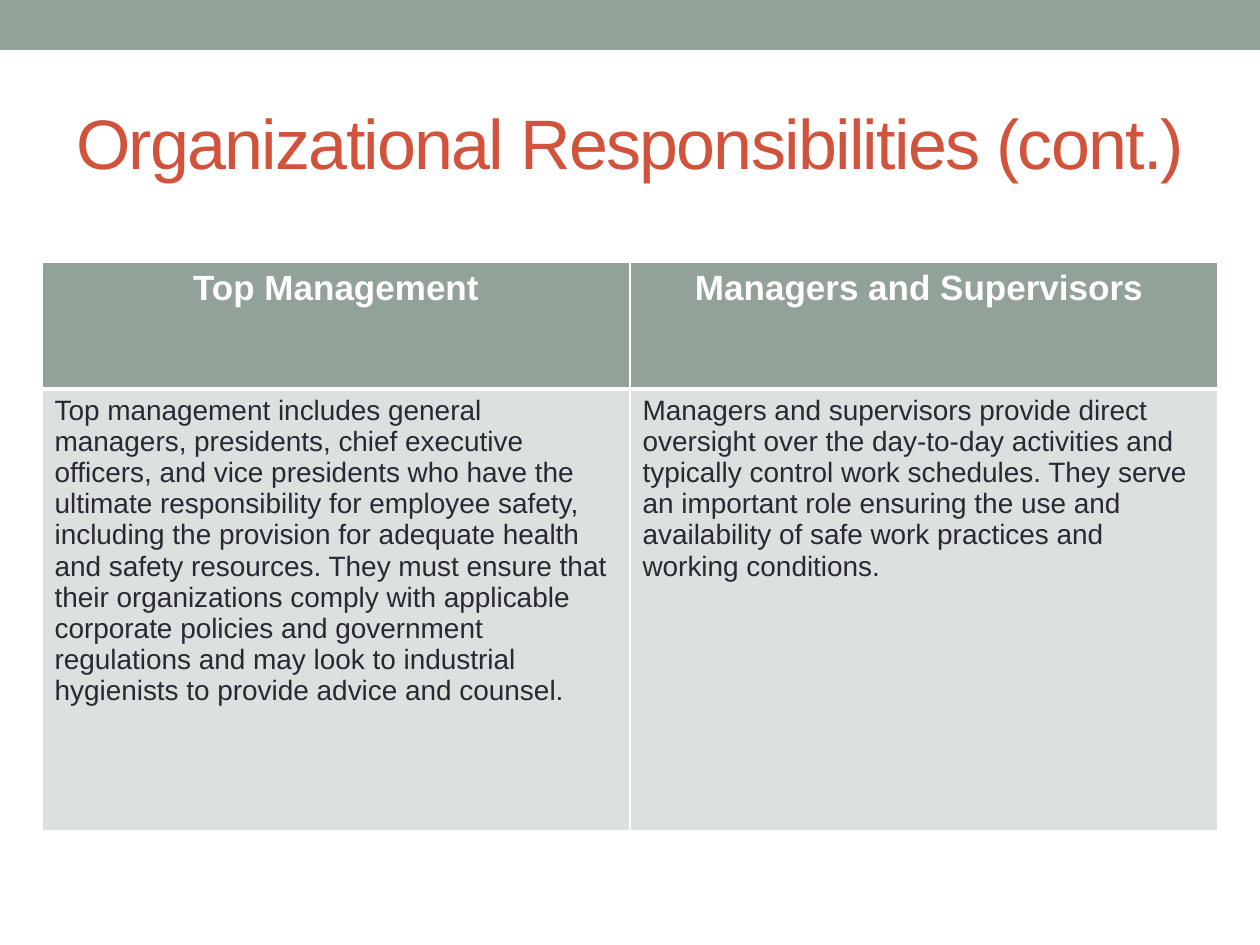
from lxml import etree
from pptx import Presentation, util as u
from pptx.dml.color import RGBColor
from pptx.enum import shapes, text
from pptx.oxml import ns

SCALE = 914400 / 126
SAGE, RUST, INK, PALE, WHITE = "93A299", "D2533C", "292934", "DCE0DE", "FFFFFF"


def px(*lengths):
    return [u.Emu(round(length * SCALE)) for length in lengths]


def paint(target, color):
    if hasattr(target, "solid"):
        target.solid()
        target.fore_color.rgb = RGBColor.from_string(color)
    else:
        target.rgb = RGBColor.from_string(color)


deck = Presentation()
deck.slide_width, deck.slide_height = px(1260, 945)
slide = deck.slides.add_slide(deck.slide_layouts[5])

banner = slide.shapes.add_shape(shapes.MSO_SHAPE.RECTANGLE, *px(0, 0, 1260, 50))
banner.shadow.inherit = False
paint(banner.fill, SAGE)
banner.line.fill.background()

title = slide.shapes.title
title.left, title.top, title.width, title.height = px(63, 73, 1134, 136)
heading = title.text_frame
heading.text = "Organizational Responsibilities (cont.)"
heading.vertical_anchor = text.MSO_ANCHOR.MIDDLE
heading.margin_left = heading.margin_right = 0
heading.paragraphs[0].alignment = text.PP_ALIGN.CENTER
heading_run = heading.paragraphs[0].runs[0]
heading_run.font.name = "Arial"
heading_run.font.size = u.Pt(40)
paint(heading_run.font.color, RUST)
heading_run.font._element.set("spc", "-100")

responsibilities = [
    ["Top Management", "Managers and Supervisors "],
    [
        "Top management includes general managers, presidents, chief executive "
        "officers, and vice presidents who have the ultimate responsibility for "
        "employee safety, including the provision for adequate health and safety "
        "resources. They must ensure that their organizations comply with "
        "applicable corporate policies and government regulations and may look "
        "to industrial hygienists to provide advice and counsel.",
        "Managers and supervisors provide direct oversight over the day-to-day "
        "activities and typically control work schedules. They serve an important "
        "role ensuring the use and availability of safe work practices and "
        "working conditions.",
    ],
]
row_styles = [
    (127, SAGE, WHITE, 20, True, text.PP_ALIGN.CENTER, 3),
    (442, PALE, INK, 16, False, text.PP_ALIGN.LEFT, 1),
]

table = slide.shapes.add_table(2, 2, *px(42, 262, 1176, 569)).table
for column in table.columns:
    column.width = px(588)[0]

for r, (height, fill, ink, size, bold, align, bottom) in enumerate(row_styles):
    table.rows[r].height = px(height)[0]
    for c, wording in enumerate(responsibilities[r]):
        cell = table.cell(r, c)
        cell.text_frame.text = wording
        paragraph = cell.text_frame.paragraphs[0]
        paragraph.alignment = align
        font = paragraph.runs[0].font
        font.name, font.size, font.bold = "Arial", u.Pt(size), bold
        paint(font.color, ink)
        paint(cell.fill, fill)
        top = 3 if r else 1
        cell_properties = cell._tc.get_or_add_tcPr()
        for i, (side, points) in enumerate(zip("LRTB", (1, 1, top, bottom))):
            border = etree.Element(ns.qn(f"a:ln{side}"), w=str(u.Pt(points)))
            border_fill = etree.SubElement(border, ns.qn("a:solidFill"))
            etree.SubElement(border_fill, ns.qn("a:srgbClr"), val=WHITE)
            cell_properties.insert(i, border)

deck.save("out.pptx")
